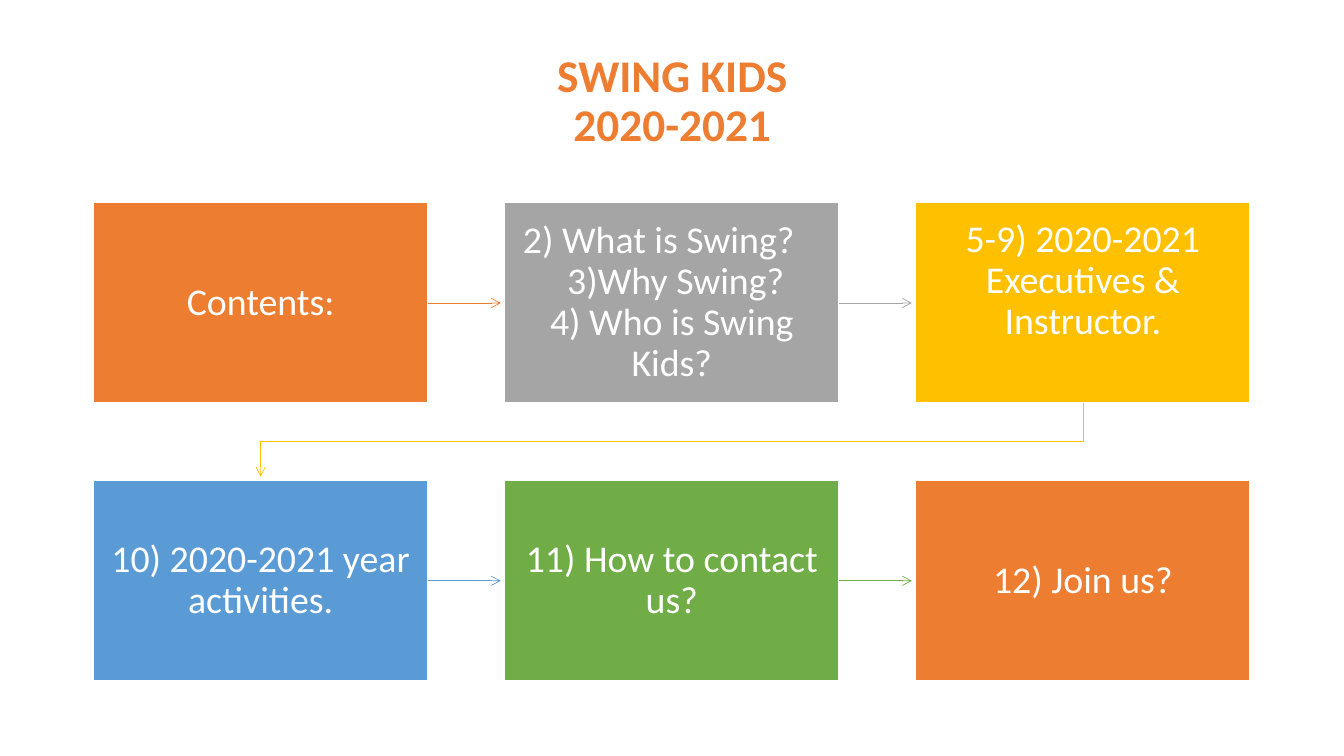
from pptx import Presentation
from pptx.dml.color import RGBColor
from pptx.enum.shapes import MSO_CONNECTOR, MSO_SHAPE
from pptx.enum.text import MSO_ANCHOR, PP_ALIGN
from pptx.oxml.ns import qn
from pptx.util import Cm, Pt
from lxml.etree import SubElement

# Content
COLOURS = {"orange": "ED7D31", "grey": "A5A5A5", "yellow": "FFC000",
           "blue": "5B9BD5", "green": "70AD47", "white": "FFFFFF"}
TITLE = ["SWING KIDS", "2020-2021"]
# Each step: colour, paragraphs, format options
STEPS = [
    ("orange", ["Contents:"], {}),
    ("grey", ["2) What is Swing?", "3)Why Swing?", "4) Who is Swing Kids?"],
     {"indents": [(0, 0.66), (0.2, 0), (0, 0)]}),
    ("yellow", ["5-9) 2020-2021 Executives & Instructor."], {"lift": 1.1}),
    ("blue", ["10) 2020-2021 year activities."], {}),
    ("green", ["11) How to contact us?"], {}),
    ("orange", ["12) Join us?"], {}),
]

# Layout in centimetres
COLUMNS = 3
LEFT, TOP = 2.36, 5.11
WIDTH, HEIGHT = 8.42, 5.05
COLUMN_STEP, ROW_STEP = 10.36, 7.0
ARROW_GAP = 0.1


def colour(name):
    return RGBColor.from_string(COLOURS[name])


def write_text(shape, lines, size, ink="white", bold=False, inset=(0.41, 0.43),
               lift=0, indents=None):
    frame = shape.text_frame
    frame.word_wrap = True
    frame.vertical_anchor = MSO_ANCHOR.MIDDLE
    frame.margin_left = frame.margin_right = Cm(inset[0])
    frame.margin_top = Cm(inset[1])
    frame.margin_bottom = Cm(inset[1] + lift)
    for number, line in enumerate(lines):
        para = frame.paragraphs[0] if number == 0 else frame.add_paragraph()
        para.alignment = PP_ALIGN.CENTER
        para.line_spacing = 0.9
        if indents:
            before, after = indents[number]
            properties = para._p.get_or_add_pPr()
            properties.set("marL", str(Cm(before)))
            properties.set("marR", str(Cm(after)))
        span = para.add_run()
        span.text = line
        span.font.name = "Calibri"
        span.font.size = Pt(size)
        span.font.bold = bold
        span.font.color.rgb = colour(ink)


def style_arrow(shape, name):
    shape.line.color.rgb = colour(name)
    shape.line.width = Pt(0.5)
    SubElement(shape.line._get_or_add_ln(), qn("a:tailEnd"), type="arrow")
    SubElement(shape._element.spPr, qn("a:effectLst"))


deck = Presentation()
deck.slide_width, deck.slide_height = Cm(33.87), Cm(19.05)
page = deck.slides.add_slide(deck.slide_layouts[6])

# Title
title = page.shapes.add_textbox(Cm(2.34), Cm(1.63), Cm(29.21), Cm(3.15))
write_text(title, TITLE, size=32.4, ink="orange", bold=True,
           inset=(0.25, 0.13), lift=1.24)

# Step boxes
boxes = []
for index, (name, lines, options) in enumerate(STEPS):
    row, column = divmod(index, COLUMNS)
    box = page.shapes.add_shape(
        MSO_SHAPE.RECTANGLE, Cm(LEFT + column * COLUMN_STEP),
        Cm(TOP + row * ROW_STEP), Cm(WIDTH), Cm(HEIGHT))
    box.shadow.inherit = False
    box.fill.solid()
    box.fill.fore_color.rgb = colour(name)
    box.line.color.rgb = colour("white")
    box.line.width = Pt(1)
    write_text(box, lines, size=27, **options)
    boxes.append(box)

# Arrows from each box to the next
for index, (start, end) in enumerate(zip(boxes, boxes[1:])):
    if start.top == end.top:
        middle = start.top + start.height // 2
        arrow = page.shapes.add_connector(
            MSO_CONNECTOR.STRAIGHT, start.left + start.width, middle,
            end.left - Cm(ARROW_GAP), middle)
        arrow.begin_connect(start, 3)
    else:
        # Bent arrow down to the start of the next row
        start_x = start.left + start.width // 2
        end_x = end.left + end.width // 2
        bottom = start.top + start.height
        bend = (bottom + end.top) // 2
        outline = page.shapes.build_freeform(start_x, bottom)
        outline.add_line_segments(
            [(start_x, bend), (end_x, bend), (end_x, end.top - Cm(ARROW_GAP))],
            close=False)
        arrow = outline.convert_to_shape()
        arrow.fill.background()
    style_arrow(arrow, STEPS[index][0])

deck.save("out.pptx")
